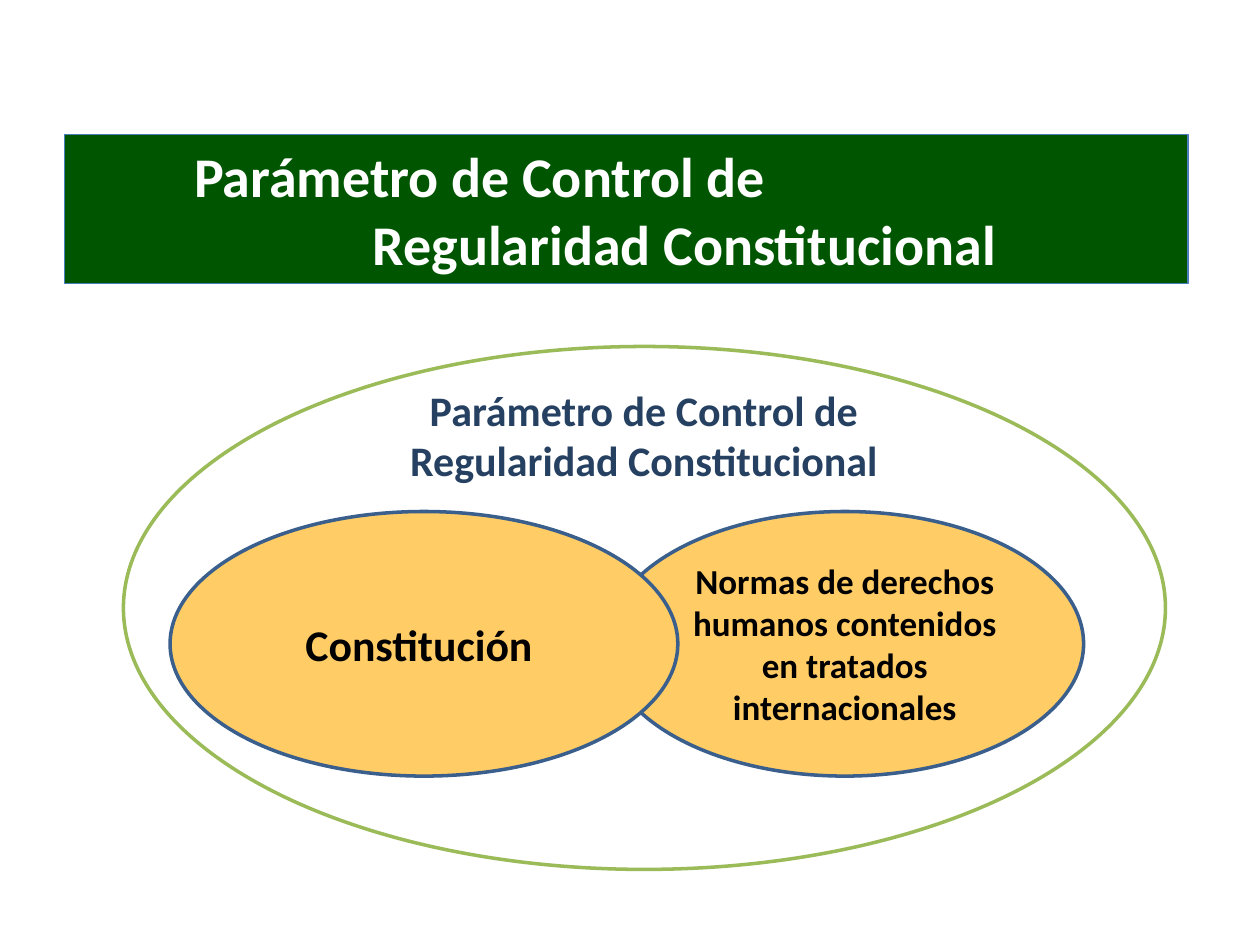
import pptx
import pptx.util
import pptx.dml.color
import pptx.enum.shapes
import pptx.enum.text

Inches = pptx.util.Inches
Pt = pptx.util.Pt
RGBColor = pptx.dml.color.RGBColor
MSO_SHAPE = pptx.enum.shapes.MSO_SHAPE
MSO_ANCHOR = pptx.enum.text.MSO_ANCHOR
MSO_AUTO_SIZE = pptx.enum.text.MSO_AUTO_SIZE
PP_ALIGN = pptx.enum.text.PP_ALIGN

WHITE = RGBColor(0xFF, 0xFF, 0xFF)
BLACK = RGBColor(0x00, 0x00, 0x00)
DARK_GREEN = RGBColor(0x00, 0x56, 0x00)
LIGHT_GREEN = RGBColor(0x9B, 0xBB, 0x59)
ORANGE = RGBColor(0xFF, 0xCC, 0x66)
BLUE = RGBColor(0x3A, 0x5F, 0x8C)
BRIGHT_BLUE = RGBColor(0x4A, 0x7E, 0xBB)
NAVY = RGBColor(0x25, 0x40, 0x61)


def paint(shape, fill, line, width):
    shape.fill.solid()
    shape.fill.fore_color.rgb = fill
    shape.line.color.rgb = line
    shape.line.width = Pt(width)


def write(shape, text, size, color, anchor=MSO_ANCHOR.MIDDLE):
    text_frame = shape.text_frame
    text_frame.text = text
    text_frame.word_wrap = True
    text_frame.auto_size = MSO_AUTO_SIZE.NONE
    text_frame.vertical_anchor = anchor
    for paragraph in text_frame.paragraphs:
        paragraph.alignment = PP_ALIGN.CENTER
        for run in paragraph.runs:
            run.font.name = "Calibri"
            run.font.size = Pt(size)
            run.font.bold = True
            run.font.color.rgb = color


def add_title(slide):
    title = slide.shapes.title
    title.left, title.top = Inches(0.51), Inches(1.07)
    title.width, title.height = Inches(8.92), Inches(1.18)
    paint(title, DARK_GREEN, BRIGHT_BLUE, 0.75)
    write(title, "Parámetro de Control de\nRegularidad Constitucional", 32, WHITE)
    first_line = title.text_frame.paragraphs[0]
    first_line.alignment = PP_ALIGN.LEFT
    first_line._p.get_or_add_pPr().set("marL", str(Inches(0.93)))


def add_ellipse(slide, left, top, width, height, fill, line):
    ellipse = slide.shapes.add_shape(
        MSO_SHAPE.OVAL, Inches(left), Inches(top), Inches(width), Inches(height))
    ellipse.shadow.inherit = False
    paint(ellipse, fill, line, 2)
    return ellipse


def add_source(slide, left, width, text, size):
    ellipse = add_ellipse(slide, left, 4.06, width, 2.1, ORANGE, BLUE)
    write(ellipse, text, size, BLACK)


def add_heading(slide, text):
    heading = slide.shapes.add_textbox(
        Inches(2.75), Inches(3), Inches(4.72), Inches(0.91))
    write(heading, text, 24, NAVY, MSO_ANCHOR.TOP)


def main():
    presentation = pptx.Presentation()
    presentation.slide_width = Inches(10)
    presentation.slide_height = Inches(7.5)
    slide = presentation.slides.add_slide(presentation.slide_layouts[5])
    add_title(slide)
    add_ellipse(slide, 0.98, 2.75, 8.27, 4.15, WHITE, LIGHT_GREEN)
    add_source(slide, 4.81, 3.79,
               "Normas de derechos humanos contenidos en tratados internacionales", 20)
    add_source(slide, 1.35, 4.03, "Constitución ", 25)
    add_heading(slide, "Parámetro de Control de Regularidad Constitucional")
    presentation.save("out.pptx")


if __name__ == "__main__":
    main()
